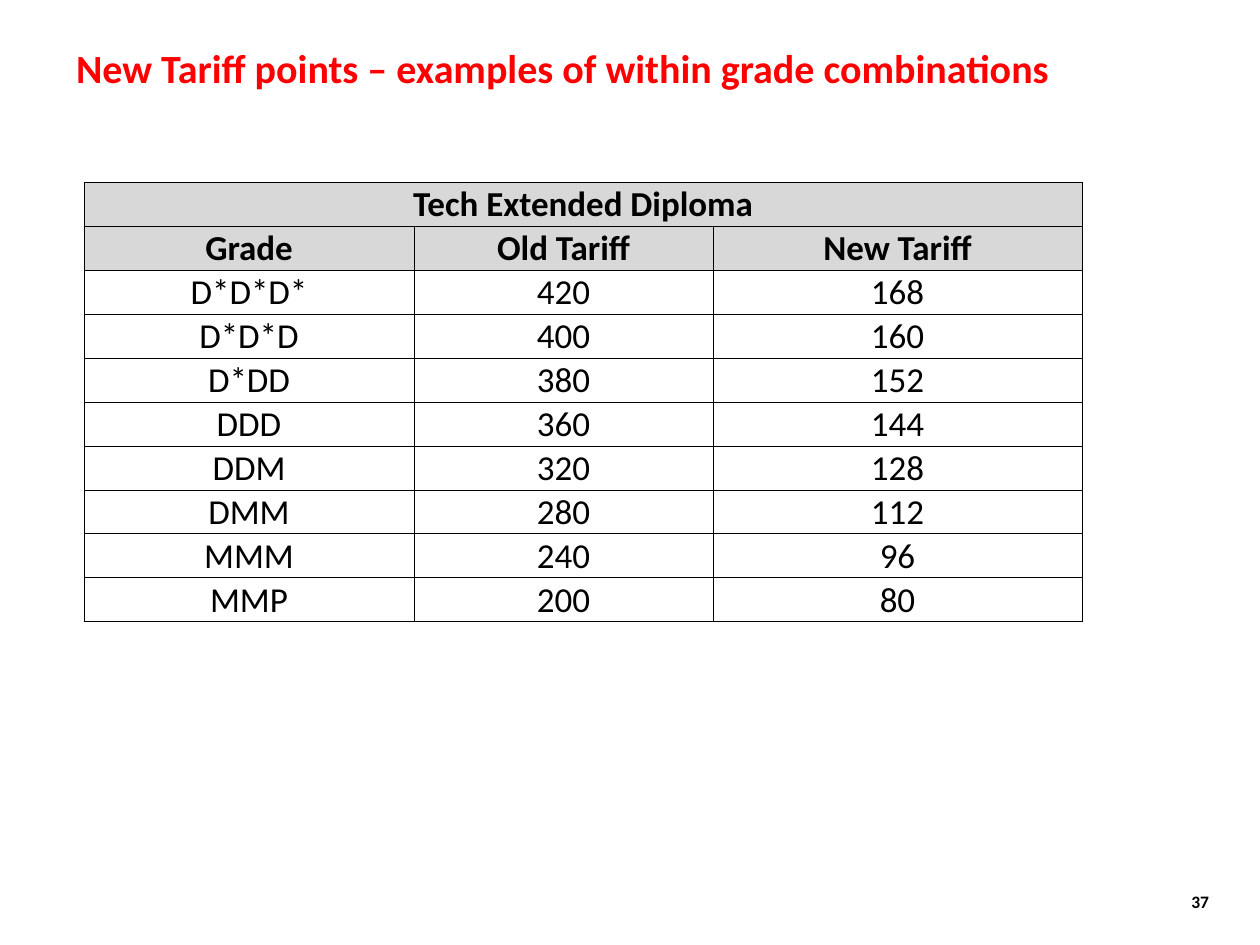
from lxml.etree import SubElement
from pptx import Presentation
from pptx.dml.color import RGBColor
from pptx.enum.text import MSO_ANCHOR, PP_ALIGN
from pptx.oxml.ns import qn
from pptx.util import Emu, Pt

FONT = "Calibri"
RED = RGBColor(0xFF, 0x00, 0x00)
BLACK = RGBColor(0x00, 0x00, 0x00)
HEADER_GREY = RGBColor(0xD8, 0xD8, 0xD8)

TABLE_TITLE = "Tech Extended Diploma"
COLUMN_HEADS = ("Grade", "Old Tariff", "New Tariff")
TARIFFS = (
    ("D*D*D*", 420, 168),
    ("D*D*D", 400, 160),
    ("D*DD", 380, 152),
    ("DDD", 360, 144),
    ("DDM", 320, 128),
    ("DMM", 280, 112),
    ("MMM", 240, 96),
    ("MMP", 200, 80),
)
COLUMN_WIDTHS = (330, 299, 369)
ROW_HEIGHT = 44


def px(length):
    return Emu(length * 10160)


def set_margins(holder, left, top, right, bottom):
    """Set the insets of a text frame or a table cell."""
    holder.margin_left, holder.margin_top = px(left), px(top)
    holder.margin_right, holder.margin_bottom = px(right), px(bottom)


def write(frame, text, size, color, bold, align):
    frame.text = text
    para = frame.paragraphs[0]
    para.alignment = align
    for span in para.runs:
        font = span.font
        font.name, font.size, font.bold = FONT, Pt(size), bold
        font.color.rgb = color


def add_borders(cell):
    properties = cell._tc.get_or_add_tcPr()
    for side in ("a:lnL", "a:lnR", "a:lnT", "a:lnB"):
        line = SubElement(properties, qn(side), w=str(Pt(0.5)))
        fill = SubElement(line, qn("a:solidFill"))
        SubElement(fill, qn("a:srgbClr"), val=str(BLACK))


def place_text(box, left, top, width, height, anchor):
    box.left, box.top = px(left), px(top)
    box.width, box.height = px(width), px(height)
    frame = box.text_frame
    frame.word_wrap = True
    frame.vertical_anchor = anchor
    set_margins(frame, 13, 6, 13, 6)
    return frame


def add_title(page, left, top, width, height):
    frame = place_text(page.shapes.title, left, top, width, height, MSO_ANCHOR.TOP)
    write(frame, "New Tariff points – examples of within grade combinations",
          32, RED, True, PP_ALIGN.LEFT)


def add_page_number(page, left, top, width, height):
    box = page.shapes.add_textbox(0, 0, 0, 0)
    frame = place_text(box, left, top, width, height, MSO_ANCHOR.MIDDLE)
    write(frame, "37", 14, BLACK, True, PP_ALIGN.RIGHT)


def format_cell(cell, text, is_header, anchor):
    add_borders(cell)
    if is_header:
        cell.fill.solid()
        cell.fill.fore_color.rgb = HEADER_GREY
    else:
        cell.fill.background()
    set_margins(cell, 1, 1, 1, 0)
    cell.vertical_anchor = anchor
    write(cell.text_frame, text, 28, BLACK, is_header, PP_ALIGN.CENTER)


def add_tariff_table(page, left, top):
    rows = [(TABLE_TITLE, "", ""), COLUMN_HEADS, *TARIFFS]
    table = page.shapes.add_table(
        len(rows), len(COLUMN_WIDTHS), px(left), px(top),
        px(sum(COLUMN_WIDTHS)), px(ROW_HEIGHT * len(rows))).table
    table.first_row = table.horz_banding = False
    for column, width in zip(table.columns, COLUMN_WIDTHS):
        column.width = px(width)
    for row_index, values in enumerate(rows):
        table.rows[row_index].height = px(ROW_HEIGHT)
        is_header = row_index < 2
        for column_index, value in enumerate(values):
            at_bottom = is_header or column_index == 1
            anchor = MSO_ANCHOR.BOTTOM if at_bottom else MSO_ANCHOR.TOP
            if column_index == 2 and 2 <= row_index <= 4:
                anchor = MSO_ANCHOR.MIDDLE
            format_cell(table.cell(row_index, column_index), str(value),
                        is_header, anchor)
    table.cell(0, 0).merge(table.cell(0, len(COLUMN_WIDTHS) - 1))


def main():
    deck = Presentation()
    deck.slide_width, deck.slide_height = px(1260), px(945)
    page = deck.slides.add_slide(deck.slide_layouts[5])
    add_title(page, 63, 38, 1134, 158)
    add_page_number(page, 1146, 876, 76, 50)
    add_tariff_table(page, 84, 182)
    deck.save("out.pptx")


if __name__ == "__main__":
    main()
